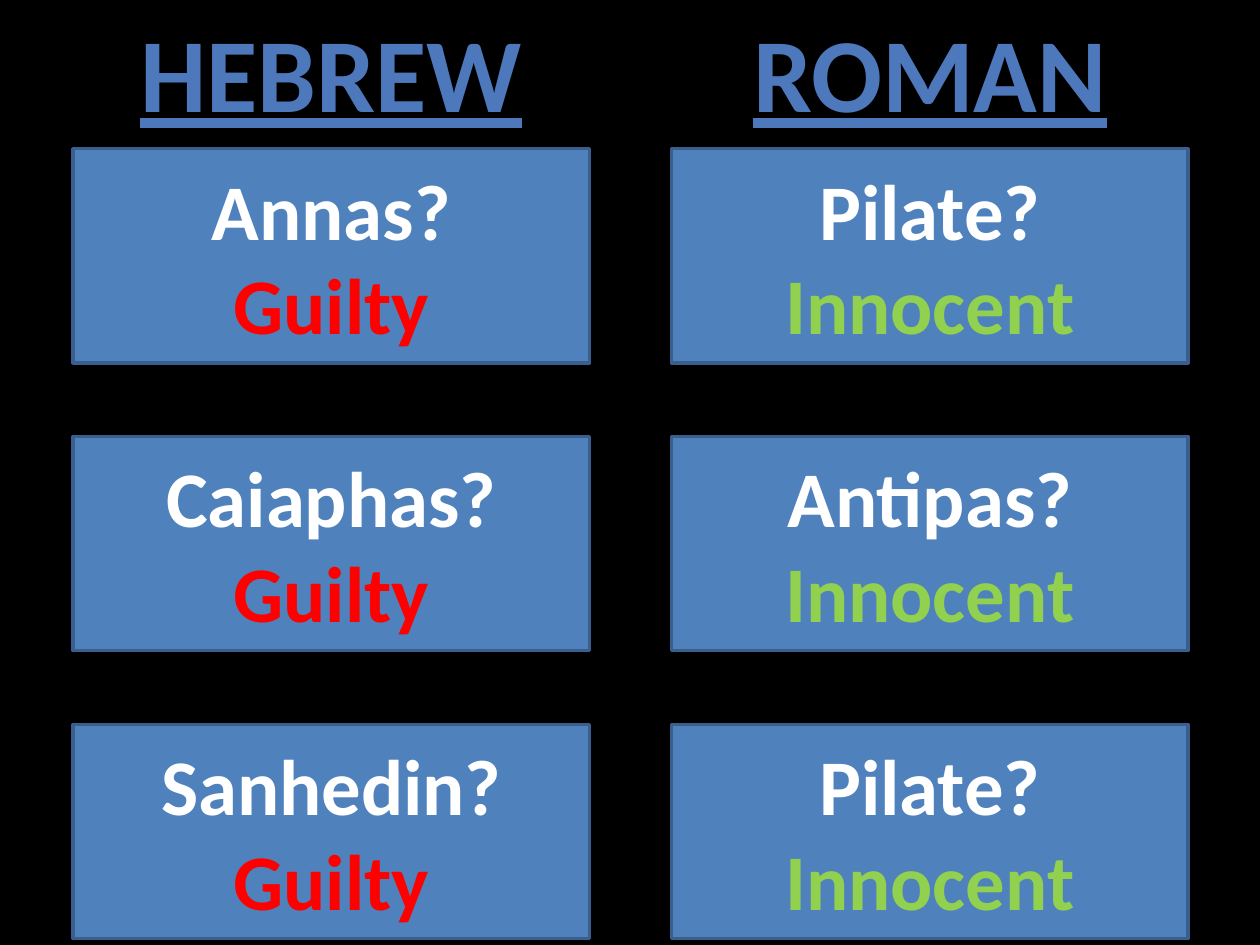
import pptx
import pptx.dml.color
import pptx.enum.shapes
import pptx.enum.text
import pptx.util

Pt = pptx.util.Pt
RGBColor = pptx.dml.color.RGBColor

BLACK = RGBColor(0x00, 0x00, 0x00)
WHITE = RGBColor(0xFF, 0xFF, 0xFF)
RED = RGBColor(0xFF, 0x00, 0x00)
GREEN = RGBColor(0x92, 0xD0, 0x50)
HEADING = RGBColor(0x4D, 0x79, 0xBC)
BOX_FILL = RGBColor(0x4F, 0x81, 0xBD)
BOX_LINE = RGBColor(0x3A, 0x5F, 0x8C)

# Grid, in points
COLUMN_X = 41.75
COLUMN_STEP = 342
ROW_Y = 85
ROW_STEP = 164.5
BOX_W, BOX_H = 295.2, 122.4
HEADING_Y, HEADING_H = 0.7, 80


class SlideBuilder:
    font = "Calibri"
    heading_size = 60
    box_size = 45

    def __init__(self, slide):
        self.s = slide
        fill = slide.background.fill
        fill.solid()
        fill.fore_color.rgb = BLACK

    def add_run(self, p, text, size, color, underline=None):
        p.alignment = pptx.enum.text.PP_ALIGN.CENTER
        r = p.add_run()
        r.text = text
        r.font.name = self.font
        r.font.size = Pt(size)
        r.font.bold = True
        r.font.underline = underline
        r.font.color.rgb = color

    def heading(self, x, text):
        sp = self.s.shapes.add_textbox(Pt(x), Pt(HEADING_Y), Pt(BOX_W), Pt(HEADING_H))
        tf = sp.text_frame
        tf.word_wrap = True
        self.add_run(tf.paragraphs[0], text, self.heading_size, HEADING, True)

    def verdict_box(self, x, y, judge, verdict, color):
        sp = self.s.shapes.add_shape(
            pptx.enum.shapes.MSO_SHAPE.RECTANGLE, Pt(x), Pt(y), Pt(BOX_W), Pt(BOX_H))
        sp.shadow.inherit = False
        sp.fill.solid()
        sp.fill.fore_color.rgb = BOX_FILL
        sp.line.color.rgb = BOX_LINE
        sp.line.width = Pt(2)
        tf = sp.text_frame
        tf.word_wrap = True
        tf.vertical_anchor = pptx.enum.text.MSO_ANCHOR.MIDDLE
        self.add_run(tf.paragraphs[0], judge, self.box_size, WHITE)
        self.add_run(tf.add_paragraph(), verdict, self.box_size, color)


def main():
    prs = pptx.Presentation()
    prs.slide_width, prs.slide_height = Pt(720), Pt(540)
    builder = SlideBuilder(prs.slides.add_slide(prs.slide_layouts[6]))

    # One column per court: heading, judges, shared verdict
    courts = [
        ("HEBREW", ["Annas?", "Caiaphas?", "Sanhedin?"], "Guilty", RED),
        ("ROMAN", ["Pilate?", "Antipas?", "Pilate?"], "Innocent", GREEN),
    ]
    for col, (court, judges, verdict, color) in enumerate(courts):
        x = COLUMN_X + col * COLUMN_STEP
        builder.heading(x, court)
        for row, judge in enumerate(judges):
            builder.verdict_box(x, ROW_Y + row * ROW_STEP, judge, verdict, color)

    prs.save("out.pptx")


if __name__ == "__main__":
    main()
